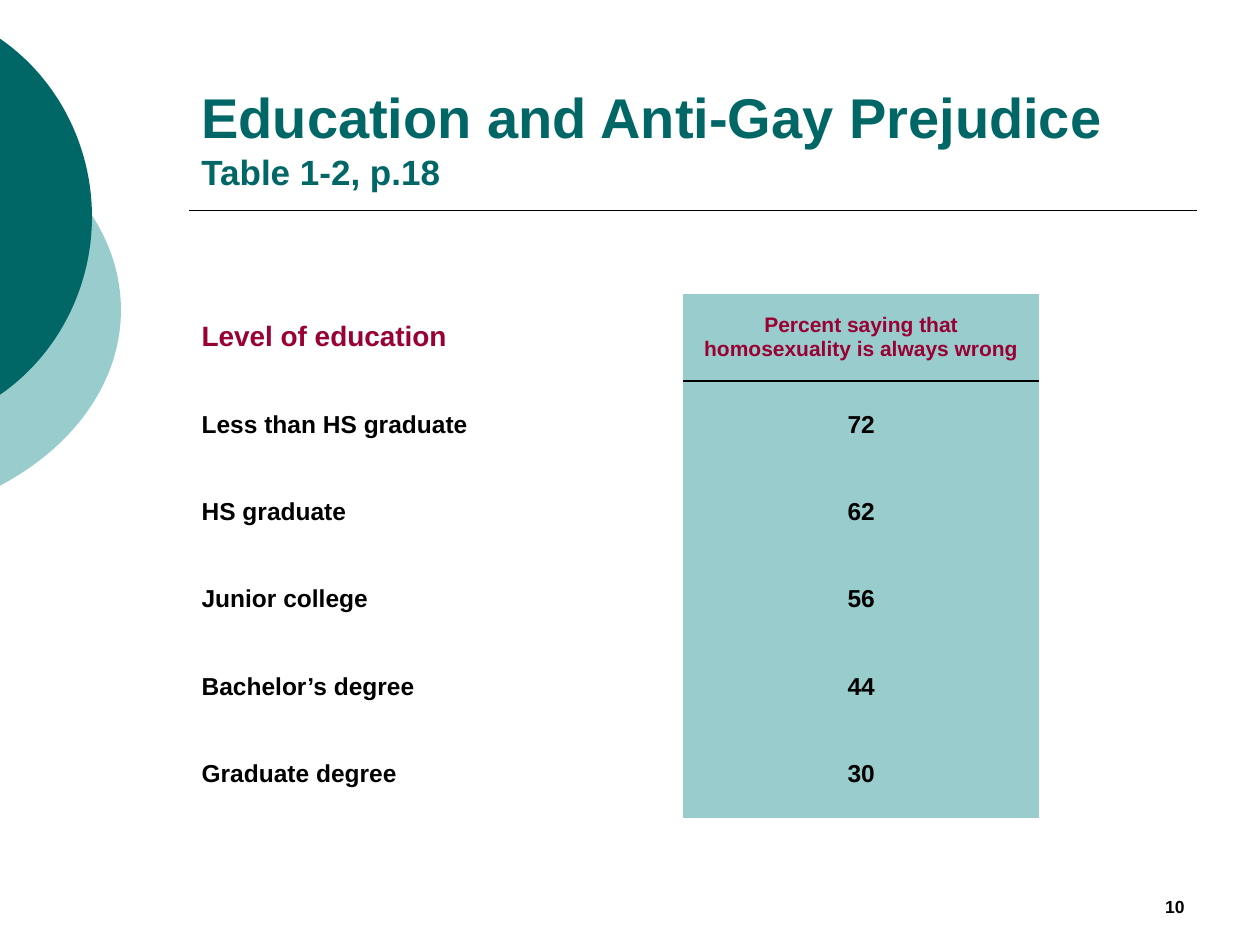
import pptx
import pptx.util
import pptx.dml.color
import pptx.enum.shapes
import pptx.enum.text
import pptx.oxml
import pptx.oxml.ns
import lxml.etree

Inches = pptx.util.Inches
Pt = pptx.util.Pt
ALIGN = pptx.enum.text.PP_ALIGN
ANCHOR = pptx.enum.text.MSO_ANCHOR
qn = pptx.oxml.ns.qn

TEAL, PALE_TEAL, WINE, BLACK = "006666", "99CCCC", "990033", "000000"
NO_STYLE_NO_GRID = "{2D5ABB26-0587-4C30-8999-92F81FD0307C}"
HEADINGS = ("Level of education", "Percent saying that homosexuality is always wrong")
PERCENT_BY_LEVEL = (
    ("Less than HS graduate", "72"),
    ("HS graduate", "62"),
    ("Junior college", "56"),
    ("Bachelor’s degree", "44"),
    ("Graduate degree", "30"),
)


def color(hex_code):
    return pptx.dml.color.RGBColor.from_string(hex_code)


def set_font(font, size, hex_code):
    font.name = "Arial"
    font.size = Pt(size)
    font.bold = True
    font.color.rgb = color(hex_code)


def add_text_area(slide, left, top, width, height):
    frame = slide.shapes.add_textbox(left, top, width, height).text_frame
    frame.word_wrap = True
    frame.vertical_anchor = ANCHOR.BOTTOM
    return frame


def add_edge_circle(slide, left, top, width, height, quarter, hex_code):
    upper = [(Inches(x) - left, Inches(y) - top) for x, y in quarter]
    middle = upper[-1][1]
    lower = [(x, 2 * middle - y) for x, y in reversed(upper[:-1])]
    builder = slide.shapes.build_freeform(*upper[0], scale=1.0)
    builder.add_line_segments([upper[-1], lower[-1]], close=True)
    circle = builder.convert_to_shape()
    circle.left, circle.top, circle.width, circle.height = left, top, width, height
    outline = circle._element.spPr.find(".//" + qn("a:path"))
    outline.set("w", str(width))
    outline.set("h", str(height))
    start = outline.find(qn("a:moveTo")).find(qn("a:pt"))
    start.set("x", str(upper[0][0]))
    start.set("y", str(upper[0][1]))
    for straight, curve in zip(outline.findall(qn("a:lnTo")), (upper[1:], lower)):
        arc = lxml.etree.Element(qn("a:cubicBezTo"))
        for x, y in curve:
            lxml.etree.SubElement(arc, qn("a:pt"), x=str(x), y=str(y))
        outline.replace(straight, arc)
    circle.shadow.inherit = False
    circle.fill.solid()
    circle.fill.fore_color.rgb = color(hex_code)
    circle.line.fill.background()


def add_title(slide, left, top, width, height):
    paragraph = add_text_area(slide, left, top, width, height).paragraphs[0]
    for words, size in (("Education and Anti-Gay Prejudice", 32), (" ", 36), ("Table 1-2, p.18", 20)):
        run = paragraph.add_run()
        run.text = words
        set_font(run.font, size, TEAL)
        if words == " ":
            paragraph.add_line_break()


def add_rule(slide, left, top, width):
    rule = slide.shapes.add_connector(
        pptx.enum.shapes.MSO_CONNECTOR.STRAIGHT, left, top, left + width, top
    )
    rule.line.color.rgb = color(BLACK)
    rule.line.width = Pt(1)
    lxml.etree.SubElement(rule._element.spPr, qn("a:effectLst"))


def add_bottom_border(cell):
    border = pptx.oxml.parse_xml(
        f'<a:lnB {pptx.oxml.ns.nsdecls("a")} w="{Pt(1)}">'
        f'<a:solidFill><a:srgbClr val="{BLACK}"/></a:solidFill></a:lnB>'
    )
    cell._tc.get_or_add_tcPr().insert(0, border)


def fill_cell(cell, words, size, hex_code, is_percent):
    cell.vertical_anchor = ANCHOR.MIDDLE
    cell.text = words
    paragraph = cell.text_frame.paragraphs[0]
    set_font(paragraph.font, size, hex_code)
    if is_percent:
        paragraph.alignment = ALIGN.CENTER
        cell.fill.solid()
        cell.fill.fore_color.rgb = color(PALE_TEAL)
    else:
        cell.fill.background()


def add_education_table(slide, left, top, width, height):
    row_count = len(PERCENT_BY_LEVEL) + 1
    table = slide.shapes.add_table(row_count, 2, left, top, width, height).table
    table.first_row = False
    table.horz_banding = False
    table._tbl.tblPr.find(qn("a:tableStyleId")).text = NO_STYLE_NO_GRID
    percent_width = Inches(2.83)
    table.columns[0].width = width - percent_width
    table.columns[1].width = percent_width
    for column, (heading, size) in enumerate(zip(HEADINGS, (16, 12))):
        fill_cell(table.cell(0, column), heading, size, WINE, column == 1)
    for row, entry in enumerate(PERCENT_BY_LEVEL, start=1):
        for column, words in enumerate(entry):
            fill_cell(table.cell(row, column), words, 14, BLACK, column == 1)
    add_bottom_border(table.cell(0, 1))


def add_page_number(slide, left, top, width, height):
    paragraph = add_text_area(slide, left, top, width, height).paragraphs[0]
    paragraph.text = "10"
    paragraph.alignment = ALIGN.RIGHT
    set_font(paragraph.font, 10, BLACK)


def main():
    deck = pptx.Presentation()
    deck.slide_width, deck.slide_height = Inches(10), Inches(7.5)
    slide = deck.slides.add_slide(deck.slide_layouts[6])
    pale_quarter = ((-0.01, 1.06), (0.6, 1.38), (0.96, 1.9), (0.96, 2.46))
    dark_quarter = ((-0.01, 0.3), (0.46, 0.62), (0.73, 1.16), (0.73, 1.72))
    add_edge_circle(
        slide, Inches(-3.54), Inches(0.75), Inches(4.5), Inches(3.42), pale_quarter, PALE_TEAL
    )
    add_edge_circle(
        slide, Inches(-2.65), Inches(0), Inches(3.38), Inches(3.45), dark_quarter, TEAL
    )
    add_rule(slide, Inches(1.5), Inches(1.67), Inches(8))
    add_page_number(slide, Inches(7.17), Inches(6.83), Inches(2.33), Inches(0.5))
    add_title(slide, Inches(1.5), Inches(0.33), Inches(8), Inches(1.25))
    add_education_table(slide, Inches(1.5), Inches(2.33), Inches(6.75), Inches(4.16))
    deck.save("out.pptx")


if __name__ == "__main__":
    main()
